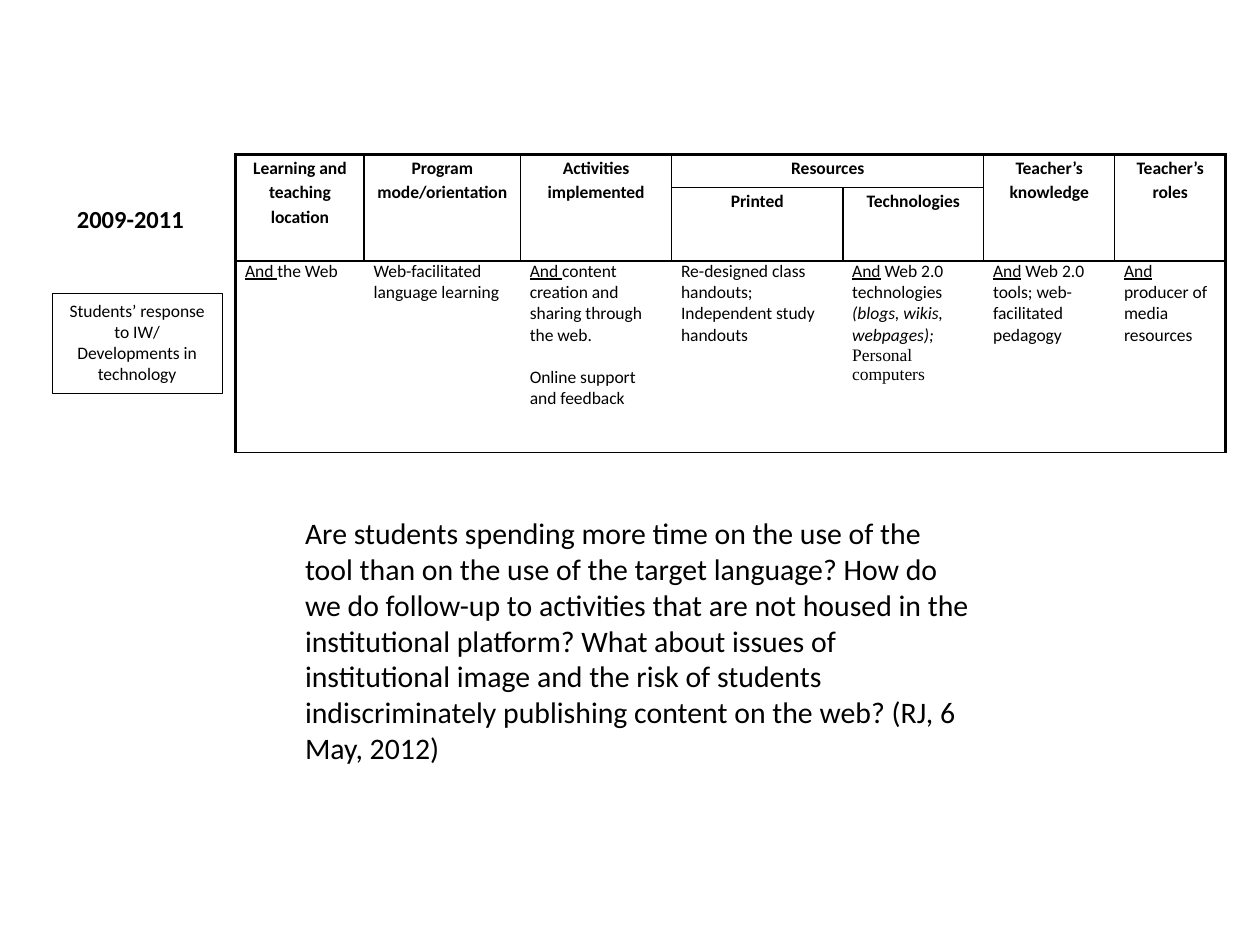
from dataclasses import dataclass
from lxml import etree
from pptx import Presentation
from pptx.dml.color import RGBColor
from pptx.enum.shapes import MSO_SHAPE
from pptx.enum.text import MSO_ANCHOR, PP_ALIGN
from pptx.oxml.ns import qn
from pptx.util import Cm, Pt

RECT = MSO_SHAPE.RECTANGLE
TOP = MSO_ANCHOR.TOP
LEFT, CENTER = PP_ALIGN.LEFT, PP_ALIGN.CENTER


@dataclass(frozen=True)
class Theme:
    """Colours, fonts, type sizes and line widths."""
    ink: str = "000000"
    paper: str = "FFFFFF"
    sans: str = "Calibri"
    serif: str = "Times New Roman"
    small: int = 10
    label: int = 14
    quote: int = 17
    thin: float = 1
    thick: float = 2.25
    frame: float = 0.5


THEME = Theme()
WIDTHS = [2.59, 3.15, 3.05, 3.45, 2.84, 2.64, 2.24]
HEIGHTS = [0.66, 0.66, 3.86]
SPANS = [(0, 0, 1, 0), (0, 1, 1, 1), (0, 2, 1, 2), (0, 3, 0, 4),
         (0, 5, 1, 5), (0, 6, 1, 6)]
HEADS = {
    (0, 0): ["Learning and teaching", "location"],
    (0, 1): ["Program mode/orientation"],
    (0, 2): ["Activities implemented"],
    (0, 3): ["Resources"],
    (0, 5): ["Teacher’s knowledge"],
    (0, 6): ["Teacher’s roles"],
    (1, 3): ["Printed"],
    (1, 4): ["Technologies"],
}
BODY = [
    [[("And ", "u"), ("the Web", "")]],
    [[("Web-facilitated language learning", "")]],
    [[("And ", "u"), ("content creation and sharing through the web.", "")],
     [("Online support and feedback", "gap")]],
    [[("Re-designed class handouts;", "")],
     [("Independent study handouts", "")]],
    [[("And", "u"), (" Web 2.0 technologies", "")],
     [("(blogs, wikis, webpages);", "i")],
     [("Personal computers", "serif")]],
    [[("And", "u"), (" Web 2.0 tools; web-facilitated pedagogy", "")]],
    [[("And ", "u"), ("producer of media resources", "")]],
]
QUOTE = (
    "Are students spending more time on the use of the tool than on the use "
    "of the target language? How do we do follow-up to activities that are "
    "not housed in the institutional platform? What about issues of "
    "institutional image and the risk of students indiscriminately "
    "publishing content on the web? (RJ, 6 May, 2012)"
)


def set_font(para, size, bold=False, face=THEME.sans, align=LEFT):
    """Set the font and alignment of a whole paragraph."""
    font = para.font
    font.name, font.size, font.bold = face, Pt(size), bold
    font.color.rgb = RGBColor.from_string(THEME.ink)
    para.alignment = align


def add_paras(frame, count):
    """Return the given number of paragraphs in a text frame."""
    return [frame.paragraphs[0]] + [frame.add_paragraph()
                                    for _ in range(count - 1)]


def add_edge(cell, side, width):
    """Draw one cell border, or hide it when the width is zero."""
    line = etree.SubElement(cell._tc.get_or_add_tcPr(), qn("a:ln" + side))
    line.set("w", str(Pt(width)))
    if width:
        fill = etree.SubElement(line, qn("a:solidFill"))
        etree.SubElement(fill, qn("a:srgbClr")).set("val", THEME.ink)
    else:
        etree.SubElement(line, qn("a:noFill"))


def style_cell(cell, row, col):
    """Set margins, borders and fill by place in the grid."""
    cell.margin_left = cell.margin_right = Cm(0.19)
    cell.margin_top = cell.margin_bottom = 0
    cell.vertical_anchor = TOP
    inner = 0 if row == 2 else THEME.thin
    left = 0 if (row, col) == (0, 4) else inner
    right = 0 if (row, col) == (0, 3) else inner
    top = 0 if cell.is_spanned else THEME.thin
    add_edge(cell, "L", THEME.thick if col == 0 else left)
    add_edge(cell, "R", THEME.thick if col == len(WIDTHS) - 1 else right)
    add_edge(cell, "T", THEME.thick if row == 0 else top)
    add_edge(cell, "B", THEME.thin)
    cell.fill.background()


def fill_head(cell, lines):
    """Write a centred bold heading."""
    for para, text in zip(add_paras(cell.text_frame, len(lines)), lines):
        para.text = text
        para.line_spacing = 1.15
        set_font(para, THEME.small, True, align=CENTER)


def fill_body(cell, paras):
    """Write body paragraphs made of marked runs."""
    for para, runs in zip(add_paras(cell.text_frame, len(paras)), paras):
        marks = [mark for _, mark in runs]
        face = THEME.serif if "serif" in marks else THEME.sans
        set_font(para, THEME.small, face=face)
        if "gap" in marks:
            para.space_before = Pt(12)
        if "i" in marks:
            para.font.italic = True
        for text, mark in runs:
            run = para.add_run()
            run.text = text
            if mark == "u":
                run.font.underline = True


def add_grid(slide, box):
    """Place the table of stages in its box."""
    table = slide.shapes.add_table(
        len(HEIGHTS), len(WIDTHS), *map(Cm, box)).table
    table.first_row = table.horz_banding = False
    for col, width in zip(table.columns, WIDTHS):
        col.width = Cm(width)
    for row, height in zip(table.rows, HEIGHTS):
        row.height = Cm(height)
    for top, left, end, last in SPANS:
        table.cell(top, left).merge(table.cell(end, last))
    for row in range(len(HEIGHTS)):
        for col in range(len(WIDTHS)):
            style_cell(table.cell(row, col), row, col)
    for place, lines in HEADS.items():
        fill_head(table.cell(*place), lines)
    for col, paras in enumerate(BODY):
        fill_body(table.cell(2, col), paras)


def add_text(slide, box, text, size, bold=False):
    """Place a plain wrapped text box."""
    frame = slide.shapes.add_textbox(*map(Cm, box)).text_frame
    frame.word_wrap = True
    frame.text = text
    set_font(frame.paragraphs[0], size, bold)


def add_side(slide, box):
    """Place the period and the framed note below it."""
    left, top, width, height = box
    add_text(slide, (left + 0.25, top, 2.8, 0.86), "2009-2011",
             THEME.label, True)
    note = slide.shapes.add_shape(
        RECT, Cm(left), Cm(top + 1.93), Cm(width), Cm(height - 1.93))
    note.shadow.inherit = False
    note.fill.solid()
    note.fill.fore_color.rgb = RGBColor.from_string(THEME.paper)
    note.line.color.rgb = RGBColor.from_string(THEME.ink)
    note.line.width = Pt(THEME.frame)
    frame = note.text_frame
    frame.word_wrap = True
    frame.vertical_anchor = TOP
    frame.text = "Students’ response to IW/ Developments in technology"
    set_font(frame.paragraphs[0], THEME.small, align=CENTER)


def main():
    """Build the slide and save it."""
    deck = Presentation()
    deck.slide_width, deck.slide_height = Cm(25.4), Cm(19.05)
    slide = deck.slides.add_slide(deck.slide_layouts[6])
    add_grid(slide, (4.75, 3.12, sum(WIDTHS), sum(HEIGHTS)))
    add_side(slide, (1.05, 3.99, 3.43, 3.94))
    add_text(slide, (5.9, 10.26, 14, 5.33), QUOTE, THEME.quote)
    deck.save("out.pptx")


if __name__ == "__main__":
    main()
